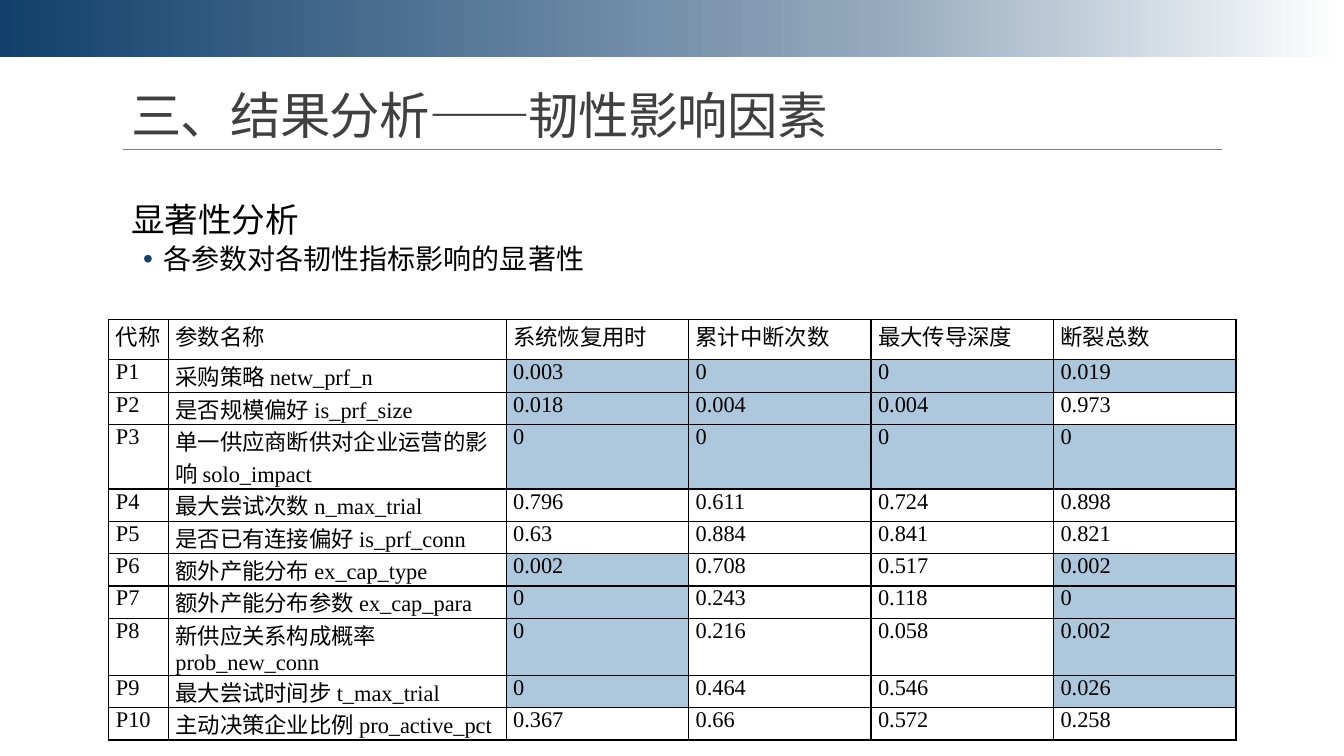
from copy import deepcopy

from lxml.etree import SubElement
from pptx import Presentation
from pptx.dml.color import RGBColor
from pptx.enum.shapes import MSO_CONNECTOR, MSO_SHAPE
from pptx.enum.text import MSO_ANCHOR, MSO_AUTO_SIZE, PP_ALIGN
from pptx.oxml.ns import qn
from pptx.util import Inches, Pt

NAVY = RGBColor(0x11, 0x40, 0x6C)
STEEL = RGBColor(0x94, 0xA9, 0xBD)
WHITE = RGBColor(0xFF, 0xFF, 0xFF)
GRAY = RGBColor(0x80, 0x80, 0x80)
DARK = RGBColor(0x40, 0x40, 0x40)
BLACK = RGBColor(0, 0, 0)
LIGHT_BLUE = RGBColor(0xAD, 0xC8, 0xDD)
FONT = "Times New Roman"

SIGNIFICANCE_LEVEL = 0.05
COLUMN_WIDTHS = [0.59, 3.35] + [1.81] * 4
ROW_HEIGHTS = [0.4, 0.21, 0.21, 0.3, 0.21, 0.3, 0.3, 0.3, 0.3, 0.25, 0.3]
HEADER = ["代称", "参数名称", "系统恢复用时", "累计中断次数", "最大传导深度", "断裂总数"]
PARAMETERS = [
    ("采购策略 netw_prf_n", 0.003, 0, 0, 0.019),
    ("是否规模偏好 is_prf_size", 0.018, 0.004, 0.004, 0.973),
    ("单一供应商断供对企业运营的影响 solo_impact", 0, 0, 0, 0),
    ("最大尝试次数 n_max_trial", 0.796, 0.611, 0.724, 0.898),
    ("是否已有连接偏好 is_prf_conn", 0.63, 0.884, 0.841, 0.821),
    ("额外产能分布 ex_cap_type", 0.002, 0.708, 0.517, 0.002),
    ("额外产能分布参数 ex_cap_para", 0, 0.243, 0.118, 0),
    ("新供应关系构成概率 prob_new_conn", 0, 0.216, 0.058, 0.002),
    ("最大尝试时间步 t_max_trial", 0, 0.464, 0.546, 0.026),
    ("主动决策企业比例 pro_active_pct", 0.367, 0.66, 0.572, 0.258),
]


def set_attributes(target, values):
    for name, value in values.items():
        setattr(target, name, value)


def place(shape, left, top, width, height):
    set_attributes(shape, {"left": Inches(left), "top": Inches(top),
                           "width": Inches(width), "height": Inches(height)})


def write(paragraph, text, size, color, **spacing):
    run = paragraph.add_run()
    run.text = text
    set_attributes(run.font, {"size": Pt(size), "name": FONT, "bold": False})
    run.font.color.rgb = color
    set_attributes(paragraph, {"alignment": PP_ALIGN.LEFT, **spacing})
    return run


def set_bullet(paragraph, margin, indent, character=None, color=None):
    properties = paragraph._p.get_or_add_pPr()
    properties.set("marL", str(Inches(margin)))
    properties.set("indent", str(Inches(indent)))
    if character is None:
        SubElement(properties, qn("a:buNone"))
        return
    bullet_color = SubElement(properties, qn("a:buClr"))
    SubElement(bullet_color, qn("a:srgbClr"), val=str(color))
    SubElement(properties, qn("a:buFont"), typeface="Arial")
    SubElement(properties, qn("a:buChar"), char=character)


def add_band(slide):
    band = slide.shapes.add_shape(MSO_SHAPE.RECTANGLE, 0, 0, Inches(13.33), Inches(0.57))
    band.shadow.inherit = False
    band.line.fill.background()
    band.fill.gradient()
    band.fill.gradient_angle = 0
    stop_list = band._element.spPr.find(".//" + qn("a:gsLst"))
    stop_list.append(deepcopy(stop_list[-1]))
    stops = [(0, NAVY), (0.65, STEEL), (1, WHITE)]
    for stop, (position, color) in zip(band.fill.gradient_stops, stops):
        stop.position = position
        stop.color.rgb = color


def add_rule(slide):
    rule = slide.shapes.add_connector(MSO_CONNECTOR.STRAIGHT, Inches(1.22), Inches(1.48),
                                      Inches(12.12), Inches(1.48))
    rule.line.color.rgb = GRAY
    rule.line.width = Pt(0.5)
    SubElement(rule._element.spPr, qn("a:effectLst"))


def fill_title(title):
    place(title, 1.2, 0.58, 11, 0.91)
    set_attributes(title.text_frame, {"vertical_anchor": MSO_ANCHOR.BOTTOM, "word_wrap": True,
                                      "auto_size": MSO_AUTO_SIZE.NONE})
    run = write(title.text_frame.paragraphs[0], "三、结果分析——韧性影响因素", 36, DARK,
                line_spacing=0.85)
    run.font._element.set("spc", "-50")


def fill_body(body):
    place(body, 1.2, 1.97, 8.99, 4.76)
    frame = body.text_frame
    set_attributes(frame, {"margin_left": 0, "margin_right": 0, "word_wrap": True,
                           "auto_size": MSO_AUTO_SIZE.NONE})
    heading = frame.paragraphs[0]
    write(heading, "显著性分析", 24, BLACK, line_spacing=0.9,
          space_before=Pt(12), space_after=Pt(2))
    set_bullet(heading, 0.1, 0)
    point = frame.add_paragraph()
    write(point, "各参数对各韧性指标影响的显著性", 20, BLACK, level=1, line_spacing=0.9,
          space_before=Pt(2), space_after=Pt(4))
    set_bullet(point, 0.42, -0.2, "•", NAVY)


def set_borders(cell):
    properties = cell._tc.get_or_add_tcPr()
    for index, side in enumerate(("a:lnL", "a:lnR", "a:lnT", "a:lnB")):
        border = properties.makeelement(qn(side), {"w": str(Pt(1))})
        fill = SubElement(border, qn("a:solidFill"))
        SubElement(fill, qn("a:srgbClr"), val=str(BLACK))
        properties.insert(index, border)


def fill_cell(cell, value):
    set_attributes(cell, {"margin_left": Inches(0.07), "margin_right": Inches(0.07),
                          "margin_top": 0, "margin_bottom": 0})
    write(cell.text_frame.paragraphs[0], str(value), 16, BLACK)
    # Shade the significant values
    if not isinstance(value, str) and value < SIGNIFICANCE_LEVEL:
        cell.fill.solid()
        cell.fill.fore_color.rgb = LIGHT_BLUE
    else:
        cell.fill.background()
    set_borders(cell)


def add_significance_table(slide):
    rows = [HEADER] + [[f"P{number}", *values] for number, values in enumerate(PARAMETERS, 1)]
    table = slide.shapes.add_table(len(rows), len(HEADER), Inches(1.08), Inches(3.17),
                                   Inches(11.18), Inches(sum(ROW_HEIGHTS))).table
    set_attributes(table, {"first_row": False, "horz_banding": False})
    for column, width in zip(table.columns, COLUMN_WIDTHS):
        column.width = Inches(width)
    for row, height, values in zip(table.rows, ROW_HEIGHTS, rows):
        row.height = Inches(height)
        for cell, value in zip(row.cells, values):
            fill_cell(cell, value)


def main():
    presentation = Presentation()
    set_attributes(presentation, {"slide_width": Inches(13.33), "slide_height": Inches(7.5)})
    slide = presentation.slides.add_slide(presentation.slide_layouts[1])

    # Header decoration
    add_band(slide)
    add_rule(slide)

    # Title, list and table
    fill_title(slide.shapes.title)
    fill_body(slide.placeholders[1])
    add_significance_table(slide)
    presentation.save("out.pptx")


if __name__ == "__main__":
    main()
